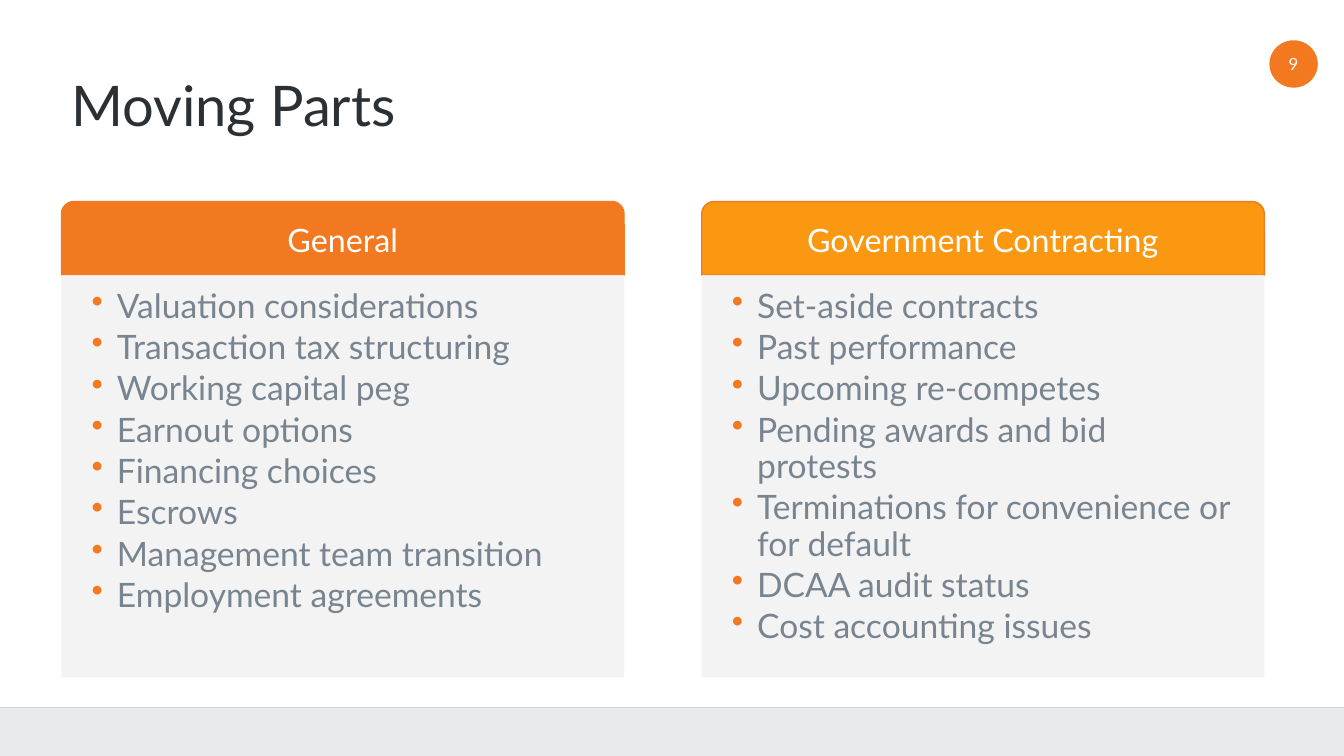
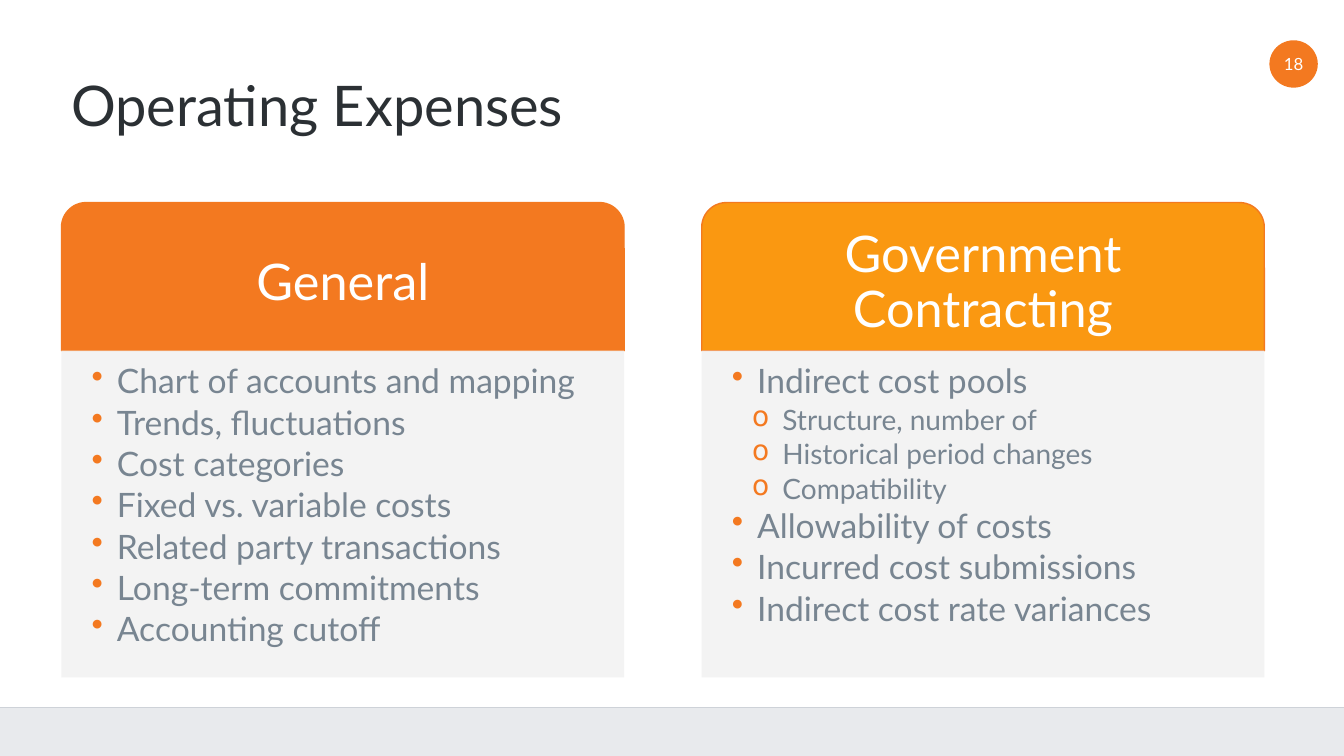
"""Build two slides, each comparing two columns of bullet points."""
from lxml import etree
from pptx import Presentation
from pptx.dml.color import RGBColor
from pptx.enum.shapes import MSO_CONNECTOR, MSO_SHAPE
from pptx.enum.text import MSO_ANCHOR, PP_ALIGN
from pptx.oxml.ns import qn
from pptx.util import Pt

RECT, OVAL = MSO_SHAPE.RECTANGLE, MSO_SHAPE.OVAL
TAB = MSO_SHAPE.ROUND_2_SAME_RECTANGLE
LINE = MSO_CONNECTOR.STRAIGHT
TOP, MID = MSO_ANCHOR.TOP, MSO_ANCHOR.MIDDLE
LEFT, CENTER = PP_ALIGN.LEFT, PP_ALIGN.CENTER

SLIDES = [
    {
        "title": "Moving Parts", "page": "9",
        "top": 200, "head": 73, "size": 23, "pad": (21, 14, 21, 10),
        "cols": [
            ("General", [
                "Valuation considerations",
                "Transaction tax structuring",
                "Working capital peg",
                "Earnout options",
                "Financing choices",
                "Escrows",
                "Management team transition",
                "Employment agreements",
            ]),
            ("Government Contracting", [
                "Set-aside contracts",
                "Past performance",
                "Upcoming re-competes",
                "Pending awards and bid protests",
                "Terminations for convenience or for default",
                "DCAA audit status",
                "Cost accounting issues",
            ]),
        ],
    },
    {
        "title": "Operating Expenses", "page": "18",
        "top": 201, "head": 147, "size": 36, "pad": (35, 23, 35, 16),
        "cols": [
            ("General", [
                "Chart of accounts and mapping",
                "Trends, fluctuations",
                "Cost categories",
                "Fixed vs. variable costs",
                "Related party transactions",
                "Long-term commitments",
                "Accounting cutoff",
            ]),
            ("Government Contracting", [
                "Indirect cost pools",
                ["Structure, number of", "Historical period changes",
                 "Compatibility"],
                "Allowability of costs",
                "Incurred cost submissions",
                "Indirect cost rate variances",
            ]),
        ],
    },
]

PX = 9144
FONT = "Lato"
WIDE, HIGH, BAND = 1333, 750, 702
EDGE, COL, STEP, BOTTOM = 61, 558, 635, 672
ORANGE, AMBER, WHITE = "F37920", "FA9811", "FFFFFF"
INK, GREY, PANEL = "2B3034", "788591", "F2F2F2"
FOOT, RULE = "E8EAED", "CED2D8"
MAIN = ("•", 24, 25, 25)
SUB = ("o", 20, 50, 30)


def rgb(code):
    return RGBColor.from_string(code)


def px(*vals):
    return [v * PX for v in vals]


def add_box(slide, kind, at, fill, line=None):
    box = slide.shapes.add_shape(kind, *px(*at))
    box.shadow.inherit = False
    box.fill.solid()
    box.fill.fore_color.rgb = rgb(fill)
    if line:
        box.line.color.rgb = rgb(line)
        box.line.width = Pt(1)
    else:
        box.line.fill.background()
    return box


def set_frame(box, pad, anchor):
    frame = box.text_frame
    frame.word_wrap = True
    frame.vertical_anchor = anchor
    (frame.margin_left, frame.margin_top,
     frame.margin_right, frame.margin_bottom) = px(*pad)
    return frame


def style(para, text, size, color, align=LEFT):
    para.text = text
    para.alignment = align
    para.line_spacing = 0.9
    para.font.name = FONT
    para.font.size = Pt(size)
    para.font.color.rgb = rgb(color)


def add_mark(para, mark, left, hang):
    props = para._p.get_or_add_pPr()
    props.set("marL", str(left * PX))
    props.set("indent", str(-hang * PX))
    tint = etree.SubElement(props, qn("a:buClr"))
    etree.SubElement(tint, qn("a:srgbClr"), val=ORANGE)
    etree.SubElement(props, qn("a:buChar"), char=mark)


def add_list(box, items):
    frame = set_frame(box, (30, 14, 30, 21), TOP)
    rows = []
    for item in items:
        if isinstance(item, list):
            rows += [(text, SUB) for text in item]
        else:
            rows.append((item, MAIN))
    for i, (text, (mark, size, left, hang)) in enumerate(rows):
        para = frame.add_paragraph() if i else frame.paragraphs[0]
        add_mark(para, mark, left, hang)
        style(para, text, size, GREY)
        para.space_after = Pt(size * 0.15)


def add_base(slide, title, page):
    add_box(slide, RECT, (0, BAND, WIDE, HIGH - BAND), FOOT)
    rule = slide.shapes.add_connector(LINE, *px(0, BAND, WIDE, BAND))
    rule.line.color.rgb = rgb(RULE)
    rule.line.width = Pt(0.75)
    etree.SubElement(rule._element.spPr, qn("a:effectLst"))
    head = slide.shapes.add_textbox(*px(EDGE, 40, 1212, 135))
    frame = set_frame(head, (10, 5, 10, 5), MID)
    style(frame.paragraphs[0], title, 40, INK)
    badge = add_box(slide, OVAL, (1259, 40, 48, 47), ORANGE)
    frame = set_frame(badge, (0, 0, 0, 0), MID)
    style(frame.paragraphs[0], page, 12, WHITE, CENTER)
    frame.paragraphs[0].line_spacing = 1.0


def add_cols(slide, data):
    top, high = data["top"], data["head"]
    body = top + high
    for i, (name, items) in enumerate(data["cols"]):
        left = EDGE + i * STEP
        tab = add_box(slide, TAB, (left, top, COL, high),
                      (ORANGE, AMBER)[i], ORANGE)
        frame = set_frame(tab, data["pad"], MID)
        style(frame.paragraphs[0], name, data["size"], WHITE, CENTER)
        panel = add_box(slide, RECT, (left, body, COL, BOTTOM - body), PANEL)
        tint = panel._element.spPr.find(qn("a:solidFill"))[0]
        etree.SubElement(tint, qn("a:alpha"), val="90000")
        add_list(panel, items)


def main():
    deck = Presentation()
    deck.slide_width, deck.slide_height = px(WIDE, HIGH)
    for data in SLIDES:
        slide = deck.slides.add_slide(deck.slide_layouts[6])
        add_base(slide, data["title"], data["page"])
        add_cols(slide, data)
    deck.save("out.pptx")


if __name__ == "__main__":
    main()
